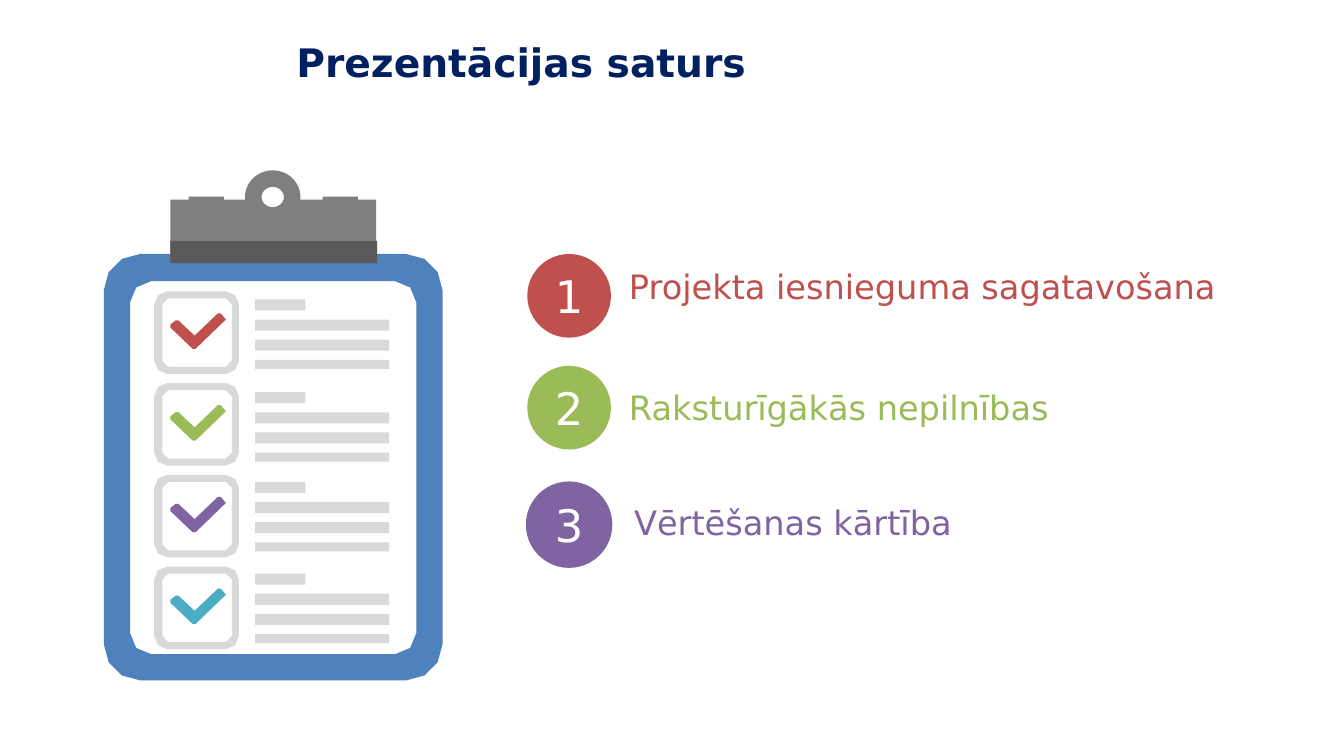
from math import cos, radians, sin

from pptx import Presentation
from pptx.dml.color import RGBColor
from pptx.enum.shapes import MSO_SHAPE
from pptx.enum.text import MSO_ANCHOR, MSO_AUTO_SIZE, PP_ALIGN
from pptx.util import Inches, Pt

FONT = "DejaVu Sans"
NAVY, BLUE, GREY, DARK, PALE = "002060", "4F81BD", "7F7F7F", "595959", "D9D9D9"
RED, GREEN, PURPLE, TEAL, WHITE = "C0504D", "9BBB59", "8064A2", "4BACC6", "FFFFFF"

ROW_TOP, ROW_PITCH = 2.89, 0.91
BAR_PITCH = 0.2
CHECK_ROWS = [(RED, 2.97), (GREEN, 3.89), (PURPLE, 4.78), (TEAL, 5.69)]
BARS = [(0.5, 0.11), (1.33, 0.11), (1.33, 0.11), (1.33, 0.09)]
TICK = [(2.24, 0.28), (2.19, 0.22), (2.16, 0.22), (1.93, 0.44), (1.77, 0.29),
        (1.74, 0.29), (1.69, 0.33), (1.69, 0.36), (1.91, 0.57), (1.94, 0.57)]
TOPICS = [
    ("Projekta iesnieguma sagatavošana", RED, 2.52, 6.14, 2.59, 6.66),
    ("Raksturīgākās nepilnības", GREEN, 3.63, 6.14, 3.79, 6.56),
    ("Vērtēšanas kārtība", PURPLE, 4.79, 6.19, 4.93, 6.56),
]


def rgb(color):
    """Turn a hex string into a colour."""
    return RGBColor.from_string(color)


def paint(sp, color):
    """Give a shape a flat fill without line or shadow."""
    sp.shadow.inherit = False
    sp.fill.solid()
    sp.fill.fore_color.rgb = rgb(color)
    sp.line.fill.background()
    return sp


def write(sp, text, size, color, align=PP_ALIGN.LEFT, anchor=MSO_ANCHOR.MIDDLE, bold=False):
    """Put one formatted line of text into a shape."""
    tf = sp.text_frame
    tf.text = text
    tf.word_wrap = True
    tf.vertical_anchor = anchor
    p = tf.paragraphs[0]
    p.alignment = align
    font = p.runs[0].font
    font.name, font.size, font.bold = FONT, Pt(size), bold
    font.color.rgb = rgb(color)


def add_preset(slide, kind, x, y, w, h, color):
    """Add a flat preset shape."""
    sp = slide.shapes.add_shape(kind, Inches(x), Inches(y), Inches(w), Inches(h))
    return paint(sp, color)


def add_outline(slide, color, *contours):
    """Add a flat freeform made of closed contours."""
    first, *holes = [[(Inches(x), Inches(y)) for x, y in c] for c in contours]
    builder = slide.shapes.build_freeform(*first[0])
    builder.add_line_segments(first[1:])
    for hole in holes:
        builder.move_to(*hole[0])
        builder.add_line_segments(hole[1:])
    return paint(builder.convert_to_shape(), color)


def arc(cx, cy, rx, ry, start, end, steps):
    """List points along an elliptical arc, with angles in degrees."""
    angles = [radians(start + (end - start) * i / steps) for i in range(steps + 1)]
    return [(cx + rx * cos(a), cy + ry * sin(a)) for a in angles]


def rounded(x, y, w, h, r, steps):
    """List the outline points of a rounded rectangle."""
    corners = [(x + r, y + r, 180), (x + w - r, y + r, 270),
               (x + w - r, y + h - r, 0), (x + r, y + h - r, 90)]
    return [pt for cx, cy, a in corners for pt in arc(cx, cy, r, r, a, a + 90, steps)]


def add_clipboard(slide):
    """Draw the board frame and its clip."""
    add_outline(slide, BLUE, rounded(1.03, 2.52, 3.36, 4.23, 0.36, 3),
                rounded(1.29, 2.79, 2.84, 3.7, 0.21, 2)[::-1])
    notch = arc(2.71, 1.98, 0.15, 0.17, 0, 180, 4)
    add_outline(slide, GREY, notch + [(1.69, 1.98), (1.69, 2.61), (3.73, 2.61), (3.73, 1.98)])
    ring = add_preset(slide, MSO_SHAPE.DONUT, 2.43, 1.69, 0.55, 0.53, GREY)
    ring.adjustments[0] = 0.31
    for x, y, w, h, color in [(1.69, 2.44, 2.05, 0.17, DARK), (1.69, 2.39, 2.05, 0.05, DARK),
                              (1.87, 1.95, 0.35, 0.09, GREY), (3.2, 1.95, 0.35, 0.08, GREY)]:
        add_preset(slide, MSO_SHAPE.RECTANGLE, x, y, w, h, color)


def add_check_row(slide, top, bar_top, color):
    """Draw a ticked box with its lines of placeholder writing."""
    add_outline(slide, PALE, rounded(1.53, top, 0.84, 0.82, 0.13, 2),
                rounded(1.61, top + 0.07, 0.69, 0.68, 0.06, 1)[::-1])
    for i, (w, h) in enumerate(BARS):
        add_preset(slide, MSO_SHAPE.RECTANGLE, 2.53, bar_top + i * BAR_PITCH, w, h, PALE)
    add_outline(slide, color, [(x, top + y) for x, y in TICK])


def add_topic(slide, number, text, color, circle_top, x, y, w):
    """Add a numbered circle and its topic."""
    circle = add_preset(slide, MSO_SHAPE.OVAL, 5.23, circle_top, 0.83, 0.83, color)
    write(circle, str(number), 32, WHITE, PP_ALIGN.CENTER)
    if number == len(TOPICS):
        circle.line.color.rgb = rgb(color)
        circle.line.width = Pt(2)
    label = slide.shapes.add_textbox(Inches(x), Inches(y), Inches(w), Inches(0.5))
    write(label, text, 24, color)
    label.text_frame.auto_size = MSO_AUTO_SIZE.SHAPE_TO_FIT_TEXT


def add_title(slide, text):
    """Place and format the title."""
    title = slide.shapes.title
    title.left, title.top = Inches(2.84), Inches(0.33)
    title.width, title.height = Inches(9.83), Inches(1.17)
    write(title, text, 28, NAVY, anchor=MSO_ANCHOR.TOP, bold=True)


def main():
    """Build the contents slide."""
    prs = Presentation()
    prs.slide_width, prs.slide_height = Inches(13.33), Inches(7.5)
    slide = prs.slides.add_slide(prs.slide_layouts[5])
    add_title(slide, "Prezentācijas saturs")
    add_clipboard(slide)
    for i, (color, bar_top) in enumerate(CHECK_ROWS):
        add_check_row(slide, ROW_TOP + i * ROW_PITCH, bar_top, color)
    for number, topic in enumerate(TOPICS, 1):
        add_topic(slide, number, *topic)
    prs.save("out.pptx")


if __name__ == "__main__":
    main()
